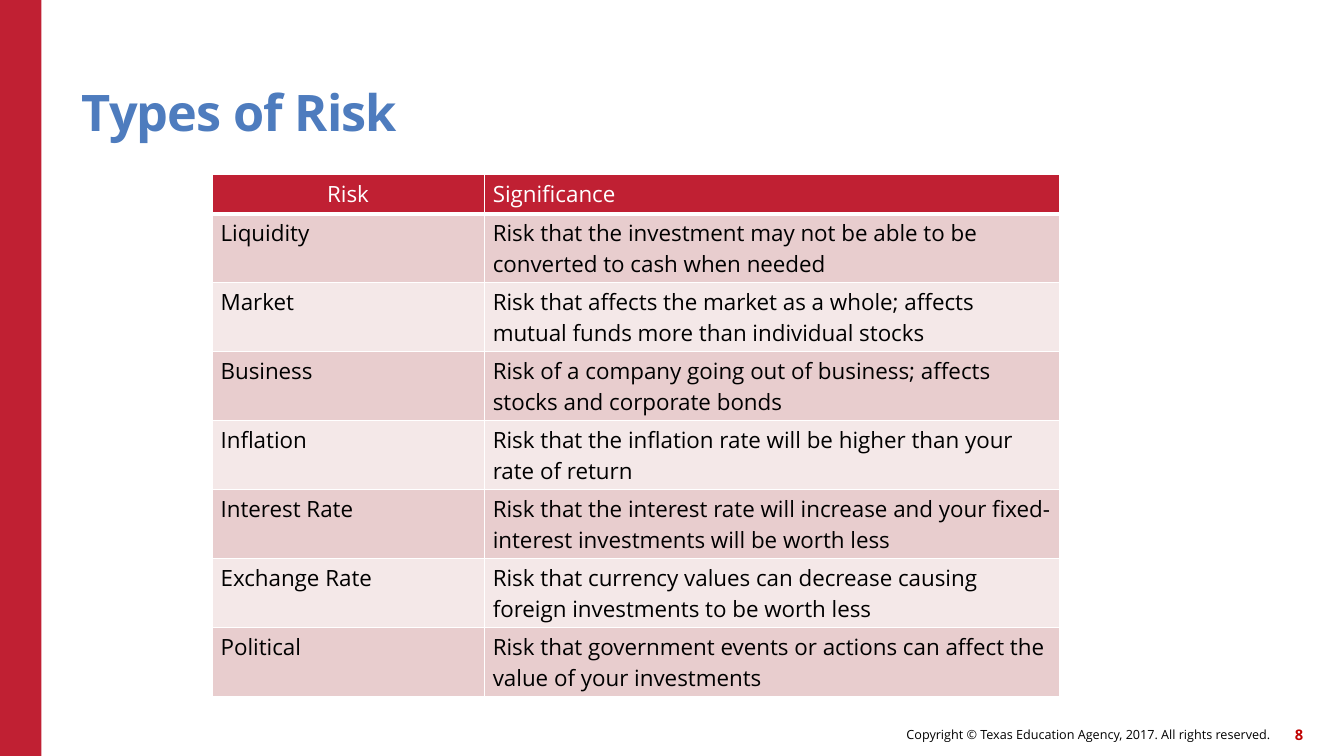
import pptx
import pptx.util
import pptx.dml.color
import pptx.enum.shapes
import pptx.enum.text
import pptx.oxml
import pptx.oxml.ns

Pt = pptx.util.Pt
Align = pptx.enum.text.PP_ALIGN
Anchor = pptx.enum.text.MSO_ANCHOR

FONT = "Open Sans"
HUES = {
    "red": "C02033",
    "blue": "4E7CBE",
    "page": "C00000",
    "dark": "E8CDCE",
    "light": "F4E8E8",
    "white": "FFFFFF",
    "black": "000000",
}
TITLE = "Types of Risk"
NOTICE = "Copyright © Texas Education Agency, 2017. All rights reserved."
PAGE = "8"
RISKS = [
    ("Risk", "Significance"),
    ("Liquidity", "Risk that the investment may not be able to be converted to cash when needed"),
    ("Market", "Risk that affects the market as a whole; affects mutual funds more than individual stocks"),
    ("Business", "Risk of a company going out of business; affects stocks and corporate bonds"),
    ("Inflation", "Risk that the inflation rate will be higher than your rate of return"),
    ("Interest Rate", "Risk that the interest rate will increase and your fixed-interest investments will be worth less"),
    ("Exchange Rate", "Risk that currency values can decrease causing foreign investments to be worth less"),
    ("Political", "Risk that government events or actions can affect the value of your investments"),
]
WIDTHS = (194.4, 411.4)
HEAD, ROW = 28, 49.3


def color(name):
    return pptx.dml.color.RGBColor.from_string(HUES[name])


def style(para, size, hue, bold=False, align=Align.LEFT):
    para.alignment = align
    for run in para.runs:
        font = run.font
        font.name, font.size, font.bold = FONT, Pt(size), bold
        font.color.rgb = color(hue)


def label(slide, text, place, size, hue, bold, align, anchor):
    box = slide.shapes.add_textbox(*map(Pt, place))
    frame = box.text_frame
    frame.word_wrap = True
    frame.vertical_anchor = anchor
    frame.margin_left = frame.margin_right = frame.margin_top = frame.margin_bottom = 0
    frame.text = text
    style(frame.paragraphs[0], size, hue, bold, align)
    return frame.paragraphs[0]


def border(cell, row):
    props = cell._tc.get_or_add_tcPr()
    for side in "LRTB":
        thick = (row, side) in ((0, "B"), (1, "T"))
        props.append(pptx.oxml.parse_xml(
            f'<a:ln{side} {pptx.oxml.ns.nsdecls("a")} w="{Pt(3 if thick else 1)}">'
            f'<a:solidFill><a:srgbClr val="{HUES["white"]}"/></a:solidFill></a:ln{side}>'
        ))


def grid(slide):
    high = HEAD + ROW * (len(RISKS) - 1)
    table = slide.shapes.add_table(
        len(RISKS), len(WIDTHS), Pt(151.4), Pt(124.7), Pt(sum(WIDTHS)), Pt(high)
    ).table
    for col, width in zip(table.columns, WIDTHS):
        col.width = Pt(width)
    for i, texts in enumerate(RISKS):
        table.rows[i].height = Pt(ROW if i else HEAD)
        fill = ("dark" if i % 2 else "light") if i else "red"
        for j, text in enumerate(texts):
            cell = table.cell(i, j)
            cell.margin_left = cell.margin_right = Pt(6.2)
            cell.margin_top = cell.margin_bottom = Pt(3.1)
            border(cell, i)
            cell.fill.solid()
            cell.fill.fore_color.rgb = color(fill)
            cell.text_frame.text = text
            align = Align.CENTER if i == j == 0 else Align.LEFT
            style(cell.text_frame.paragraphs[0], 16, "black" if i else "white", align=align)


def main():
    deck = pptx.Presentation()
    deck.slide_width, deck.slide_height = Pt(960), Pt(540)
    slide = deck.slides.add_slide(deck.slide_layouts[6])

    band = slide.shapes.add_shape(
        pptx.enum.shapes.MSO_SHAPE.RECTANGLE, 0, 0, Pt(29.6), Pt(540)
    )
    band.shadow.inherit = False
    band.fill.solid()
    band.fill.fore_color.rgb = color("red")
    band.line.fill.background()

    label(slide, NOTICE, (442, 512.8, 465.2, 23), 9, "black", False, Align.RIGHT, Anchor.MIDDLE)
    label(slide, PAGE, (900.8, 513.2, 30, 23), 10.5, "page", True, Align.RIGHT, Anchor.MIDDLE)
    title = label(slide, TITLE, (58.4, 32.4, 792, 69.1), 36, "blue", True, Align.LEFT, Anchor.BOTTOM)
    title.line_spacing = 0.9
    title.runs[0].font._element.set("spc", "-60")
    grid(slide)
    deck.save("out.pptx")


if __name__ == "__main__":
    main()
